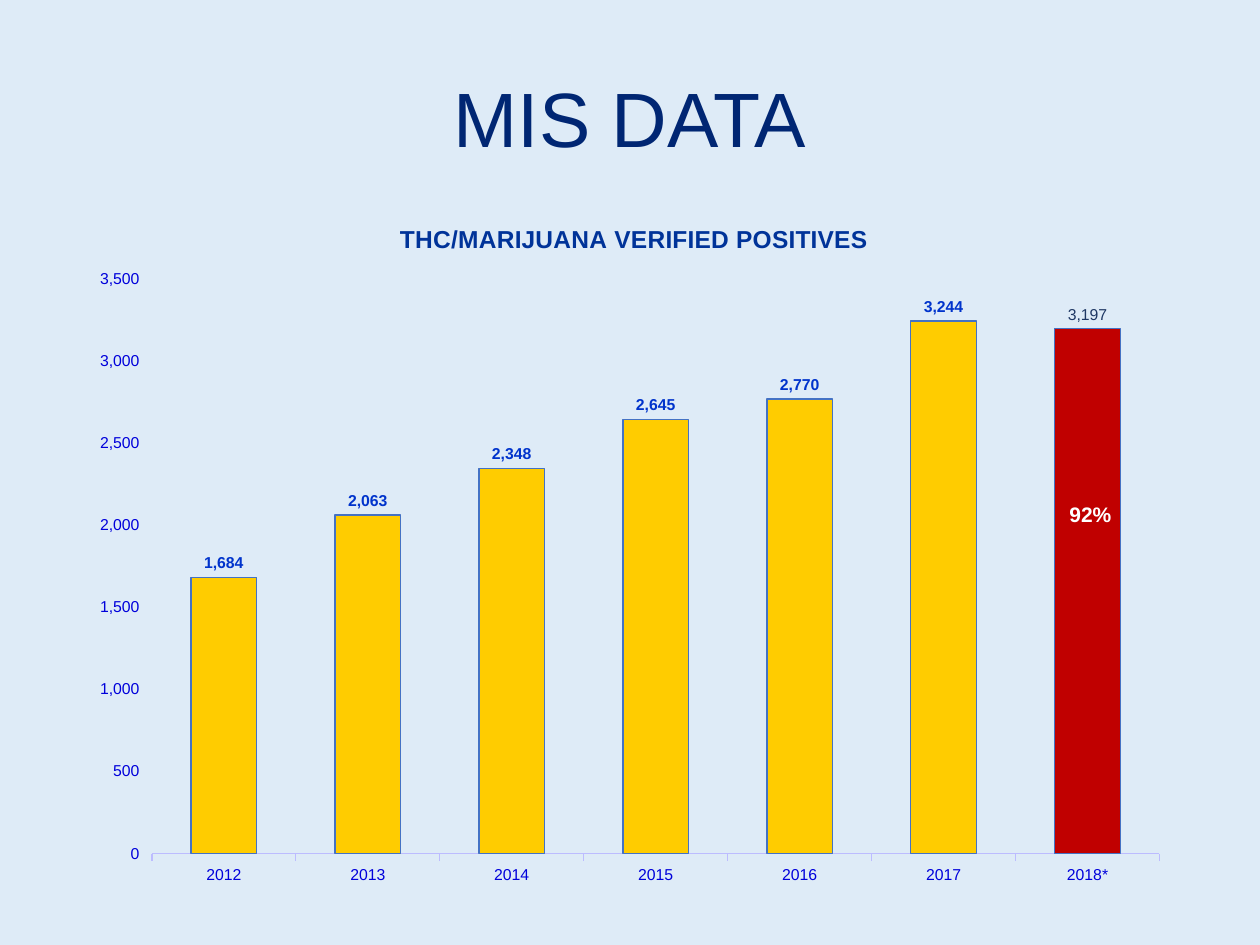
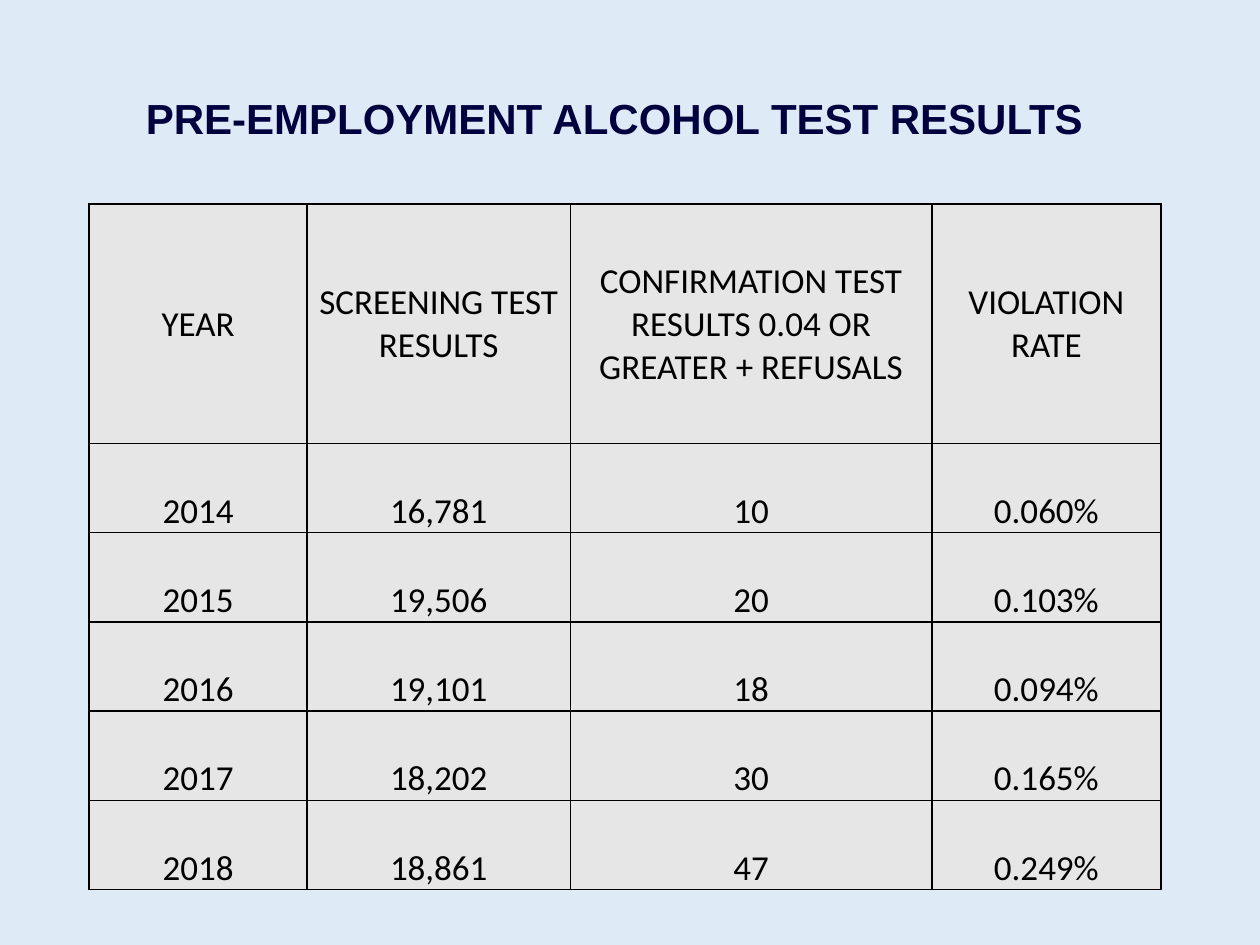
"""Build two slides: a column chart of verified positives and a table of alcohol test results."""
from lxml import etree
from pptx import Presentation
from pptx import util as u
from pptx.chart import data as chart_data
from pptx.dml.color import RGBColor
from pptx.enum import chart as ch
from pptx.enum import text
from pptx.oxml import parse_xml
from pptx.oxml.ns import nsdecls, qn

COLORS = {
    "background": "DEEBF7", "title": "002673", "heading": "00003E", "chart_title": "003399",
    "axis_text": "0000DB", "axis_line": "BCBCFF", "bar": "FFCC00", "latest_bar": "C00000",
    "bar_line": "4472C4", "value": "0033CC", "latest_value": "1F3864",
    "share": "FFFFFF", "cell": "E7E6E6", "cell_text": "000000",
}


def style(font, size, color, bold=False, name="Arial"):
    font.name, font.size, font.bold = name, u.Pt(size), bold
    font.color.rgb = RGBColor.from_string(COLORS[color])


def add_text(slide, box, words, size, color, bold=False, align=text.PP_ALIGN.LEFT):
    frame = slide.shapes.add_textbox(*map(u.Pt, box)).text_frame
    frame.word_wrap = True
    frame.vertical_anchor = text.MSO_ANCHOR.MIDDLE
    paragraph = frame.paragraphs[0]
    paragraph.text = words
    paragraph.alignment = align
    style(paragraph.font, size, color, bold)


prs = Presentation()
prs.slide_width, prs.slide_height = u.Pt(720), u.Pt(540)
positives_slide, alcohol_slide = [prs.slides.add_slide(prs.slide_layouts[6]) for _ in range(2)]
for slide in prs.slides:
    slide.background.fill.solid()
    slide.background.fill.fore_color.rgb = RGBColor.from_string(COLORS["background"])

positives = chart_data.CategoryChartData(number_format="#,##0")
positives.categories = ["2012", "2013", "2014", "2015", "2016", "2017", "2018*"]
positives.add_series("Series 1", [1684, 2063, 2348, 2645, 2770, 3244, 3197])
chart = positives_slide.shapes.add_chart(
    ch.XL_CHART_TYPE.COLUMN_CLUSTERED, u.Pt(44.6), u.Pt(111.6), u.Pt(630), u.Pt(402.5), positives).chart
chart.has_legend = False
style(chart.font, 10, "heading")
chart_title = chart.chart_title.text_frame.paragraphs[0]
chart_title.text = "THC/MARIJUANA VERIFIED POSITIVES"
style(chart_title.font, 14, "chart_title", True)
chart.chart_title.include_in_layout = False

plot = chart.plots[0]
plot.gap_width, plot.overlap, plot.vary_by_categories = 120, -27, False
for axis in (chart.category_axis, chart.value_axis):
    axis.has_major_gridlines = False
    axis.major_tick_mark = ch.XL_TICK_MARK.OUTSIDE
    style(axis.tick_labels.font, 9, "axis_text")
chart.category_axis.format.line.color.rgb = RGBColor.from_string(COLORS["axis_line"])
chart.category_axis.format.line.width = u.Pt(0.75)
counts = chart.value_axis
counts.format.line.fill.background()
counts.minimum_scale, counts.maximum_scale, counts.major_unit = 0, 3500, 500
counts.tick_labels.number_format = "#,##0"
counts.tick_labels.number_format_is_linked = False

bars = plot.series[0]
latest = bars.points[6]
for part, color in ((bars, "bar"), (latest, "latest_bar")):
    part.format.fill.solid()
    part.format.fill.fore_color.rgb = RGBColor.from_string(COLORS[color])
    part.format.line.color.rgb = RGBColor.from_string(COLORS["bar_line"])
    part.format.line.width = u.Pt(0.75)
bars.invert_if_negative = False
values = bars.data_labels
values.show_value = True
values.position = ch.XL_LABEL_POSITION.OUTSIDE_END
values.number_format, values.number_format_is_linked = "#,##0", False
style(values.font, 9, "value", True)
latest_value = latest.data_label.text_frame.paragraphs[0]
latest_value.text = "3,197"
style(latest_value.font, 9, "latest_value")
latest.data_label.position = ch.XL_LABEL_POSITION.OUTSIDE_END

chart_space = plot._element.getparent().getparent()
for owner, target, places in (
        ("c:plotArea", "inner", {"x": 0.067, "y": 0.119, "w": 0.914, "h": 0.816}),
        ("c:title", None, {"x": 0.288, "y": 0.034})):
    element = chart_space.find(qn(owner))
    for old in element.findall(qn("c:layout")):
        element.remove(old)
    layout = parse_xml(f"<c:layout {nsdecls('c')}><c:manualLayout/></c:layout>")
    settings = {"layoutTarget": target} if target else {}
    settings.update({"xMode": "edge", "yMode": "edge"}, **places)
    for tag, value in settings.items():
        etree.SubElement(layout[0], qn(f"c:{tag}")).set("val", str(value))
    element.insert(0 if target else 1, layout)

add_text(positives_slide, (36, 21.6, 648, 90), "MIS DATA", 44, "title", align=text.PP_ALIGN.CENTER)
add_text(positives_slide, (604, 283, 39.6, 21.6), "92%", 12, "share", True)

results = [
    ["YEAR", "SCREENING TEST RESULTS", "CONFIRMATION TEST RESULTS 0.04 OR GREATER + REFUSALS", "VIOLATION RATE"],
    ["2014", "16,781", "10", "0.060%"],
    ["2015", "19,506", "20", "0.103%"],
    ["2016", "19,101", "18", "0.094%"],
    ["2017", "18,202", "30", "0.165%"],
    ["2018", "18,861", "47", "0.249%"],
]
table = alcohol_slide.shapes.add_table(
    6, 4, u.Pt(51), u.Pt(116.6), u.Pt(612.5), u.Pt(391.8)).table
table.first_row = table.horz_banding = False
for column, width in zip(table.columns, (124.5, 150.5, 206.5, 131)):
    column.width = u.Pt(width)
for r, record in enumerate(results):
    table.rows[r].height = u.Pt(51 if r else 136.8)
    for c, words in enumerate(record):
        cell = table.cell(r, c)
        cell.text = words
        cell.vertical_anchor = text.MSO_ANCHOR.BOTTOM if r else text.MSO_ANCHOR.MIDDLE
        cell.margin_left = cell.margin_right = cell.margin_top = u.Pt(0.7)
        cell.margin_bottom = 0
        paragraph = cell.text_frame.paragraphs[0]
        paragraph.alignment = text.PP_ALIGN.CENTER
        style(paragraph.font, 20, "cell_text", name="Calibri")
        properties = cell._tc.get_or_add_tcPr()
        for side in ("lnL", "lnR", "lnT", "lnB"):
            properties.append(parse_xml(
                f'<a:{side} {nsdecls("a")} w="12700"><a:solidFill>'
                f'<a:srgbClr val="{COLORS["cell_text"]}"/></a:solidFill></a:{side}>'))
        cell.fill.solid()
        cell.fill.fore_color.rgb = RGBColor.from_string(COLORS["cell"])

add_text(alcohol_slide, (76.3, 49, 561.6, 36), "PRE-EMPLOYMENT ALCOHOL TEST RESULTS", 24, "heading", True)

prs.save("out.pptx")
